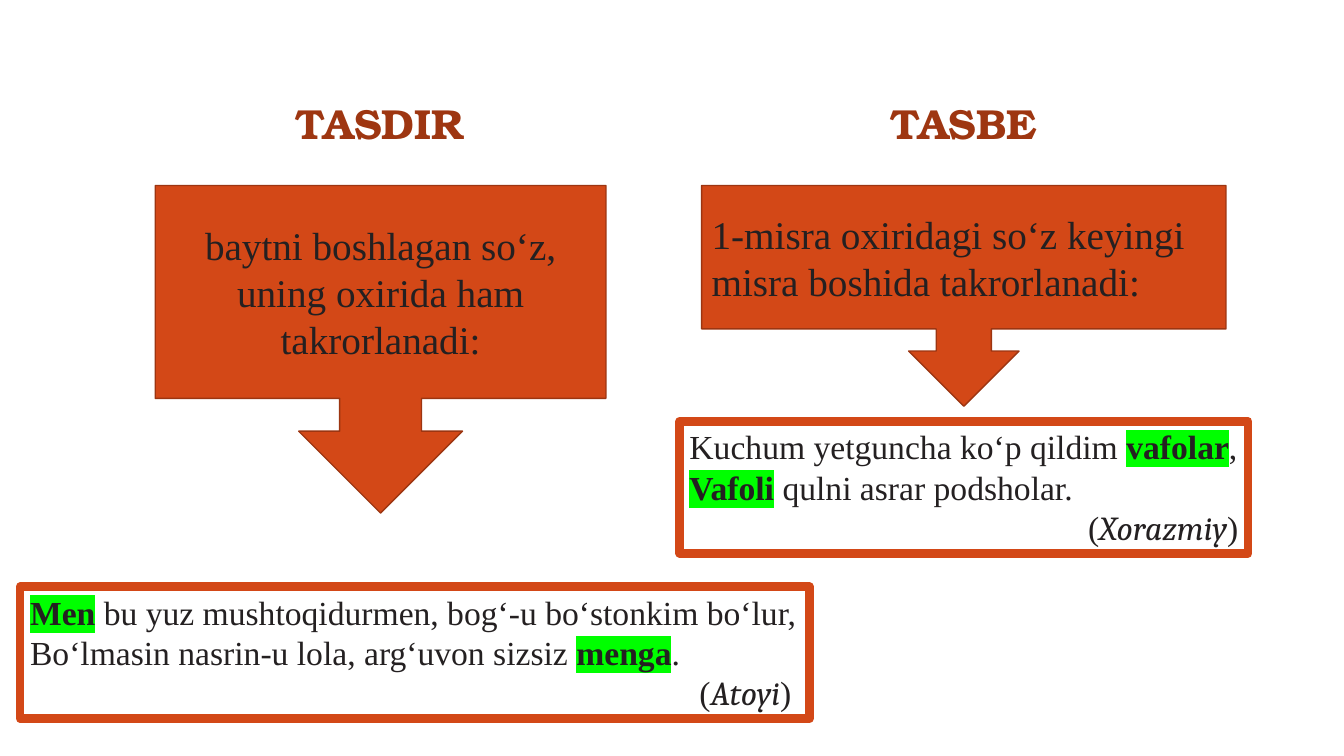
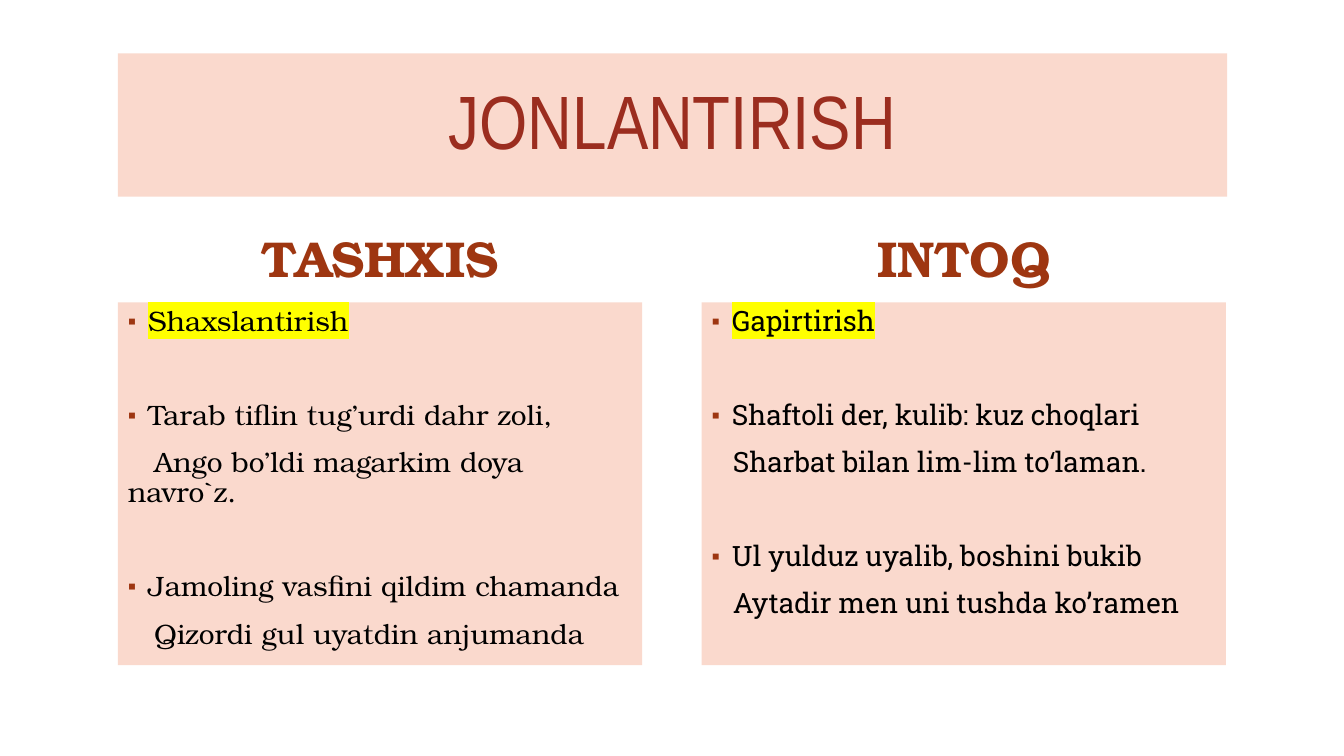
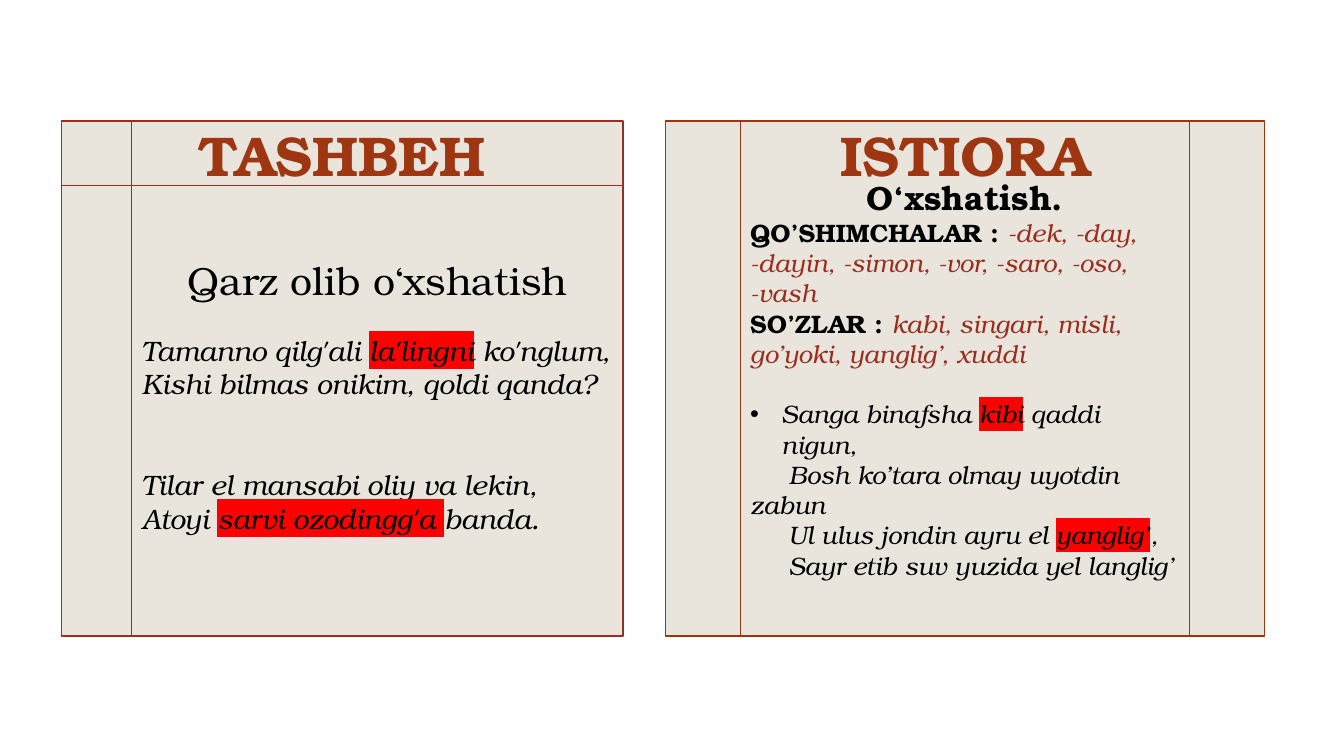
import pptx
import pptx.dml.color
import pptx.enum.shapes
import pptx.enum.text
import pptx.oxml
import pptx.oxml.ns
import pptx.util
from lxml import etree

Inches = pptx.util.Inches
Pt = pptx.util.Pt
SHAPES = pptx.enum.shapes.MSO_SHAPE
ALIGNMENTS = {
    "left": pptx.enum.text.PP_ALIGN.LEFT,
    "center": pptx.enum.text.PP_ALIGN.CENTER,
    "right": pptx.enum.text.PP_ALIGN.RIGHT,
}
ANCHORS = {
    "top": pptx.enum.text.MSO_ANCHOR.TOP,
    "middle": pptx.enum.text.MSO_ANCHOR.MIDDLE,
}
COLORS = {
    "white": "FFFFFF", "black": "000000", "ink": "242021",
    "orange": "D34817", "outline": "9C3511", "heading": "9E3611",
    "crimson": "9B2D1F", "peach": "FAD9CD", "sand": "E9E5DC",
    "green": "00FF00", "yellow": "FFFF00", "red": "FF0000",
}
SERIF, BONUM, SLAB = "Times New Roman", "TeX Gyre Bonum", "Roboto Slab"
COLUMN_LEFTS = (1.17, 6.96)
COLUMN_WIDTH = 5.2
HEADING_HEIGHT = 0.7

KEYWORD = {"bold": True, "highlight": "green"}
POET = {"font": "Cambria", "italic": True}
LABEL = {"bold": True}
EXAMPLES = {"color": "crimson", "italic": True}
MARKED = {"highlight": "red"}
TERM = {"highlight": "yellow"}
SQUARE = {"bullet": "▪", "bullet_color": "heading", "bullet_size": 85, "margin": 0.2, "indent": -0.2}
STANZA = SQUARE | {"before": 45.6}
VERSE = {"italic": True, "size": 20}
INDENTED = {"italic": True, "indent": 0.38}

DEFINITIONS = [
    {
        "heading": "TASDIR",
        "callout": "baytni boshlagan so‘z, uning oxirida ham takrorlanadi:",
        "callout_at": (1.54, 1.84, 4.47, 3.25),
        "align": "center",
        "quote_at": (0.2, 5.82, 7.83, 1.31),
        "quote": [
            ([("Men", KEYWORD), " bu yuz mushtoqidurmen, bog‘-u bo‘stonkim bo‘lur,"], {}),
            (["Bo‘lmasin nasrin-u lola, arg‘uvon sizsiz ", ("menga", KEYWORD), "."], {}),
            (["(", ("Atoyi", POET), ") "], {"align": "right"}),
        ],
    },
    {
        "heading": "TASBE",
        "callout": "1-misra oxiridagi so‘z keyingi misra boshida takrorlanadi:",
        "callout_at": (6.96, 1.84, 5.2, 2.19),
        "align": "left",
        "quote_at": (6.74, 4.18, 5.64, 1.31),
        "quote": [
            (["Kuchum yetguncha ko‘p qildim ", ("vafolar", KEYWORD), ","], {}),
            ([("Vafoli", KEYWORD), " qulni asrar podsholar."], {}),
            (["(", ("Xorazmiy", POET), ")"], {"align": "right"}),
        ],
    },
]

PERSONIFICATION_TITLE = "JONLANTIRISH"
PERSONIFICATIONS = [
    {
        "heading": "TASHXIS", "font": BONUM, "verse_indent": 0.26,
        "term": "Shaxslantirish",
        "couplets": [
            ("Tarab tiflin tug’urdi dahr zoli,", "Ango bo’ldi magarkim doya navro`z."),
            ("Jamoling vasfini qildim chamanda", "Qizordi gul uyatdin anjumanda"),
        ],
    },
    {
        "heading": "INTOQ", "font": SLAB, "verse_indent": 0.21,
        "term": "Gapirtirish",
        "couplets": [
            ("Shaftoli der, kulib: kuz choqlari", "Sharbat bilan lim-lim toʻlaman."),
            ("Ul yulduz uyalib, boshini bukib", "Aytadir men uni tushda ko’ramen"),
        ],
    },
]

COMPARISONS = [
    {
        "heading": "TASHBEH", "heading_left": 0.79,
        "kind": SHAPES.FLOWCHART_INTERNAL_STORAGE,
        "at": (0.61, 1.2, 5.57, 5.11), "line": "crimson", "bottom": 0.35,
        "text": [
            (["Qarz olib o‘xshatish"], {"align": "center", "size": 28}),
            (["Tamanno qilg'ali ", ("la'lingni", MARKED), " ko'nglum,"], VERSE | {"before": 21.6}),
            (["Kishi bilmas onikim, qoldi qanda?"], VERSE),
            (["Tilar el mansabi oliy va lekin,"], VERSE | {"before": 48}),
            (["Atoyi ", ("sarvi ozodingg'a ", MARKED), "banda."], VERSE),
        ],
    },
    {
        "heading": "ISTIORA", "heading_left": 6.97,
        "kind": SHAPES.FLOWCHART_PREDEFINED_PROCESS,
        "at": (6.6, 1.2, 5.94, 5.11), "line": "outline", "bottom": 0.05,
        "text": [
            (["O‘xshatish."], {"align": "center", "size": 24, "bold": True}),
            ([("QO’SHIMCHALAR : ", LABEL),
              ("-dek, -day, -dayin, -simon, -vor, -saro, -oso, -vash", EXAMPLES)], {}),
            ([("SO’ZLAR : ", LABEL),
              ("kabi, singari, misli, go’yoki, yanglig’, xuddi", EXAMPLES)], {}),
            (["Sanga binafsha ", ("kibi", MARKED), " qaddi nigun,"],
             {"italic": True, "bullet": "•", "margin": 0.31, "indent": -0.31, "before": 21.6}),
            (["Bosh ko’tara olmay uyotdin zabun"], INDENTED),
            (["Ul ulus jondin ayru el ", ("yanglig’", MARKED), ","], INDENTED),
            (["Sayr etib suv yuzida yel langlig’"], INDENTED),
        ],
    },
]


def rgb(name):
    return pptx.dml.color.RGBColor.from_string(COLORS[name])


def add_color(parent, tag, name):
    holder = etree.SubElement(parent, pptx.oxml.ns.qn(tag))
    etree.SubElement(holder, pptx.oxml.ns.qn("a:srgbClr"), val=COLORS[name])
    return holder


def format_paragraph(paragraph, style):
    properties = paragraph._p.get_or_add_pPr()
    properties.set("marL", str(Inches(style.get("margin", 0))))
    properties.set("indent", str(Inches(style.get("indent", 0))))
    if "bullet" in style:
        if "bullet_color" in style:
            add_color(properties, "a:buClr", style["bullet_color"])
            etree.SubElement(properties, pptx.oxml.ns.qn("a:buSzPct"), val=str(style["bullet_size"] * 1000))
        etree.SubElement(properties, pptx.oxml.ns.qn("a:buFont"), typeface="Arial")
        etree.SubElement(properties, pptx.oxml.ns.qn("a:buChar"), char=style["bullet"])
    else:
        etree.SubElement(properties, pptx.oxml.ns.qn("a:buNone"))
    paragraph.alignment = ALIGNMENTS[style.get("align", "left")]
    paragraph.line_spacing = style.get("spacing", 1.0)
    paragraph.space_before = Pt(style.get("before", 0))


def write_text(shape, content, anchor="middle", bottom=0.05, **base):
    if isinstance(content, str):
        content = [([content], {})]
    frame = shape.text_frame
    frame.word_wrap = True
    frame.auto_size = pptx.enum.text.MSO_AUTO_SIZE.NONE
    frame.vertical_anchor = ANCHORS[anchor]
    frame.margin_bottom = Inches(bottom)
    for index, (runs, options) in enumerate(content):
        paragraph = frame.add_paragraph() if index else frame.paragraphs[0]
        paragraph_style = base | options
        format_paragraph(paragraph, paragraph_style)
        for item in runs:
            text, extra = (item, {}) if isinstance(item, str) else item
            style = paragraph_style | extra
            run = paragraph.add_run()
            run.text = text
            run.font.name = style["font"]
            run.font.size = Pt(style["size"])
            run.font.bold = style.get("bold", False)
            run.font.italic = style.get("italic", False)
            run.font.color.rgb = rgb(style["color"])
            if "highlight" in style:
                properties = run._r.get_or_add_rPr()
                highlight = add_color(properties, "a:highlight", style["highlight"])
                properties.find(pptx.oxml.ns.qn("a:solidFill")).addnext(highlight)


def add_panel(slide, kind, at, fill, line=None, width=1):
    shape = slide.shapes.add_shape(kind, *map(Inches, at))
    shape.shadow.inherit = False
    shape.fill.solid()
    shape.fill.fore_color.rgb = rgb(fill)
    if line:
        shape.line.color.rgb = rgb(line)
        shape.line.width = Pt(width)
    else:
        shape.line.fill.background()
    return shape


def add_heading(slide, text, left, top, size):
    box = slide.shapes.add_textbox(*map(Inches, (left, top, COLUMN_WIDTH, HEADING_HEIGHT)))
    write_text(box, text, font=BONUM, size=size, color="heading", bold=True, align="center", spacing=0.9)


def add_title(slide, text):
    title = slide.shapes.title
    title.left, title.top, title.width, title.height = map(Inches, (1.17, 0.53, 11, 1.42))
    title.fill.solid()
    title.fill.fore_color.rgb = rgb("peach")
    write_text(title, text, font="Arial Narrow", size=54, color="crimson", align="center", spacing=0.9)


def build_definitions(slide):
    for left, item in zip(COLUMN_LEFTS, DEFINITIONS):
        add_heading(slide, item["heading"], left, 0.9, 30)
        quote = add_panel(slide, SHAPES.RECTANGLE, item["quote_at"], "white", "orange", 6)
        write_text(quote, item["quote"], anchor="top", font=SERIF, size=24, color="ink")
        callout = add_panel(slide, SHAPES.DOWN_ARROW_CALLOUT, item["callout_at"], "orange", "outline")
        write_text(callout, item["callout"], font=SERIF, size=28, color="ink", align=item["align"])


def build_personifications(slide):
    add_title(slide, PERSONIFICATION_TITLE)
    for left, item in zip(COLUMN_LEFTS, PERSONIFICATIONS):
        add_heading(slide, item["heading"], left, 2.24, 36)
        content = [([(item["term"], TERM)], SQUARE)]
        for first, second in item["couplets"]:
            content.append(([first], STANZA))
            content.append(([second], {"indent": item["verse_indent"], "before": 12}))
        panel = add_panel(slide, SHAPES.RECTANGLE, (left, 3, COLUMN_WIDTH, 3.6), "peach")
        write_text(panel, content, anchor="top", font=item["font"], size=20, color="black", spacing=0.9)


def build_comparisons(slide):
    for item in COMPARISONS:
        panel = add_panel(slide, item["kind"], item["at"], "sand", item["line"])
        write_text(panel, item["text"], bottom=item["bottom"], font=BONUM, size=18, color="black")
        add_heading(slide, item["heading"], item["heading_left"], 1.22, 40)


def main():
    presentation = pptx.Presentation()
    presentation.slide_width = Inches(13.33)
    presentation.slide_height = Inches(7.5)
    title_only, blank = presentation.slide_layouts[5], presentation.slide_layouts[6]
    for layout, build in (
        (blank, build_definitions),
        (title_only, build_personifications),
        (blank, build_comparisons),
    ):
        build(presentation.slides.add_slide(layout))
    presentation.save("out.pptx")


if __name__ == "__main__":
    main()
